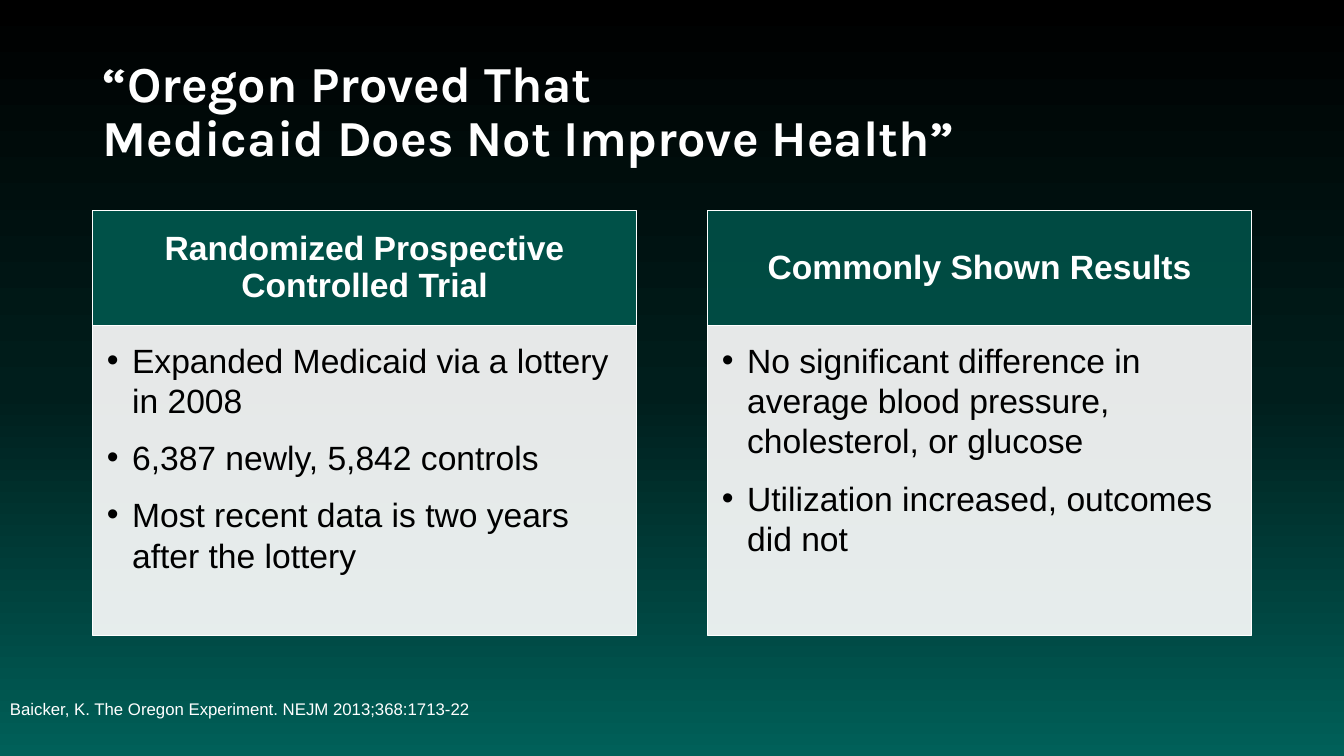
from copy import deepcopy

from lxml.etree import SubElement
from pptx import Presentation
from pptx.dml.color import RGBColor
from pptx.enum.shapes import MSO_SHAPE as Shape
from pptx.enum.text import MSO_ANCHOR as Anchor, PP_ALIGN as Align
from pptx.oxml.ns import qn
from pptx.util import Inches, Pt

WHITE = RGBColor(0xFF, 0xFF, 0xFF)
BLACK = RGBColor(0x00, 0x00, 0x00)
DARK_TEAL = RGBColor(0x00, 0x1E, 0x1C)
TEAL = RGBColor(0x00, 0x60, 0x59)
HEADER_GREEN = RGBColor(0x00, 0x51, 0x48)

# Card geometry in inches
CARD_LEFT, CARD_TOP, CARD_WIDTH = 0.92, 2.09, 5.39
CARD_STEP, HEADER_HEIGHT, BODY_HEIGHT = 6.1, 1.14, 3.07

CARDS = [
    ("Randomized Prospective Controlled Trial", 100,
     ["Expanded Medicaid via a lottery in 2008",
      "6,387 newly, 5,842 controls",
      "Most recent data is two years after the lottery"]),
    ("Commonly Shown Results", 90,
     ["No significant difference in average blood pressure, "
      "cholesterol, or glucose",
      "Utilization increased, outcomes did not"]),
]


def write(paragraph, text, size=24, font="Arial", color=WHITE, bold=False,
          align=Align.LEFT, spacing=0.9, after=0, bullet=False):
    """Fill one paragraph with formatted text."""
    paragraph.text = text
    paragraph.alignment = align
    paragraph.line_spacing = spacing
    paragraph.space_after = Pt(after)
    if bullet:
        properties = paragraph._p.get_or_add_pPr()
        properties.set("marL", str(Inches(0.25)))
        properties.set("indent", str(-Inches(0.25)))
        SubElement(properties, qn("a:buFont")).set("typeface", "Arial")
        SubElement(properties, qn("a:buChar")).set("char", "•")
    for run in paragraph.runs:
        run.font.size = Pt(size)
        run.font.name = font
        run.font.bold = bold
        run.font.color.rgb = color


class SlideBuilder:
    def __init__(self, slide):
        self.slide = slide

    def background(self, stops):
        """Top-to-bottom gradient from (position, colour) pairs."""
        fill = self.slide.background.fill
        fill.gradient()
        fill.gradient_angle = 270
        stop_list = next(self.slide.element.iter(qn("a:gsLst")))
        while len(stop_list) < len(stops):
            stop_list.append(deepcopy(stop_list[-1]))
        for stop, (position, color) in zip(fill.gradient_stops, stops):
            stop.position = position
            stop.color.rgb = color

    def frame(self, shape, anchor, insets=(0.1, 0.05, 0.1, 0.05)):
        frame = shape.text_frame
        frame.word_wrap = True
        frame.vertical_anchor = anchor
        (frame.margin_left, frame.margin_top,
         frame.margin_right, frame.margin_bottom) = map(Inches, insets)
        return frame

    def text(self, box, text, **style):
        shape = self.slide.shapes.add_textbox(*map(Inches, box))
        write(self.frame(shape, Anchor.MIDDLE).paragraphs[0], text, **style)

    def panel(self, box, fill_color, opacity, anchor, insets, lines, **style):
        shape = self.slide.shapes.add_shape(Shape.RECTANGLE, *map(Inches, box))
        shape.shadow.inherit = False
        shape.fill.solid()
        shape.fill.fore_color.rgb = fill_color
        if opacity < 100:
            solid_color = next(shape.element.iter(qn("a:solidFill")))[0]
            SubElement(solid_color, qn("a:alpha")).set("val", str(opacity * 1000))
        shape.line.color.rgb = WHITE
        shape.line.width = Pt(0.5)
        frame = self.frame(shape, anchor, insets)
        for index, line in enumerate(lines):
            paragraph = frame.add_paragraph() if index else frame.paragraphs[0]
            write(paragraph, line, **style)

    def card(self, left, heading, header_opacity, points):
        self.panel((left, CARD_TOP, CARD_WIDTH, HEADER_HEIGHT), HEADER_GREEN,
                   header_opacity, Anchor.MIDDLE, (0.19, 0.11, 0.19, 0.11),
                   [heading], bold=True, align=Align.CENTER)
        self.panel((left, CARD_TOP + HEADER_HEIGHT, CARD_WIDTH, BODY_HEIGHT),
                   WHITE, 90, Anchor.TOP, (0.14, 0.14, 0.19, 0.21), points,
                   color=BLACK, spacing=1.0, after=12, bullet=True)


def main():
    presentation = Presentation()
    presentation.slide_width = Inches(13.33)
    presentation.slide_height = Inches(7.5)
    builder = SlideBuilder(
        presentation.slides.add_slide(presentation.slide_layouts[6]))

    # Background and title
    builder.background([(0, BLACK), (0.52, DARK_TEAL), (1, TEAL)])
    builder.text((0.92, 0.4, 11.5, 1.45),
                 "“Oregon Proved That\nMedicaid Does Not Improve Health”",
                 size=36, font="Karla", bold=True)

    # Citation
    builder.text((0, 6.58, 9, 0.92),
                 "Baicker, K. The Oregon Experiment. NEJM 2013;368:1713-22",
                 size=12)

    # Two cards
    for column, card in enumerate(CARDS):
        builder.card(CARD_LEFT + column * CARD_STEP, *card)

    presentation.save("out.pptx")


if __name__ == "__main__":
    main()
